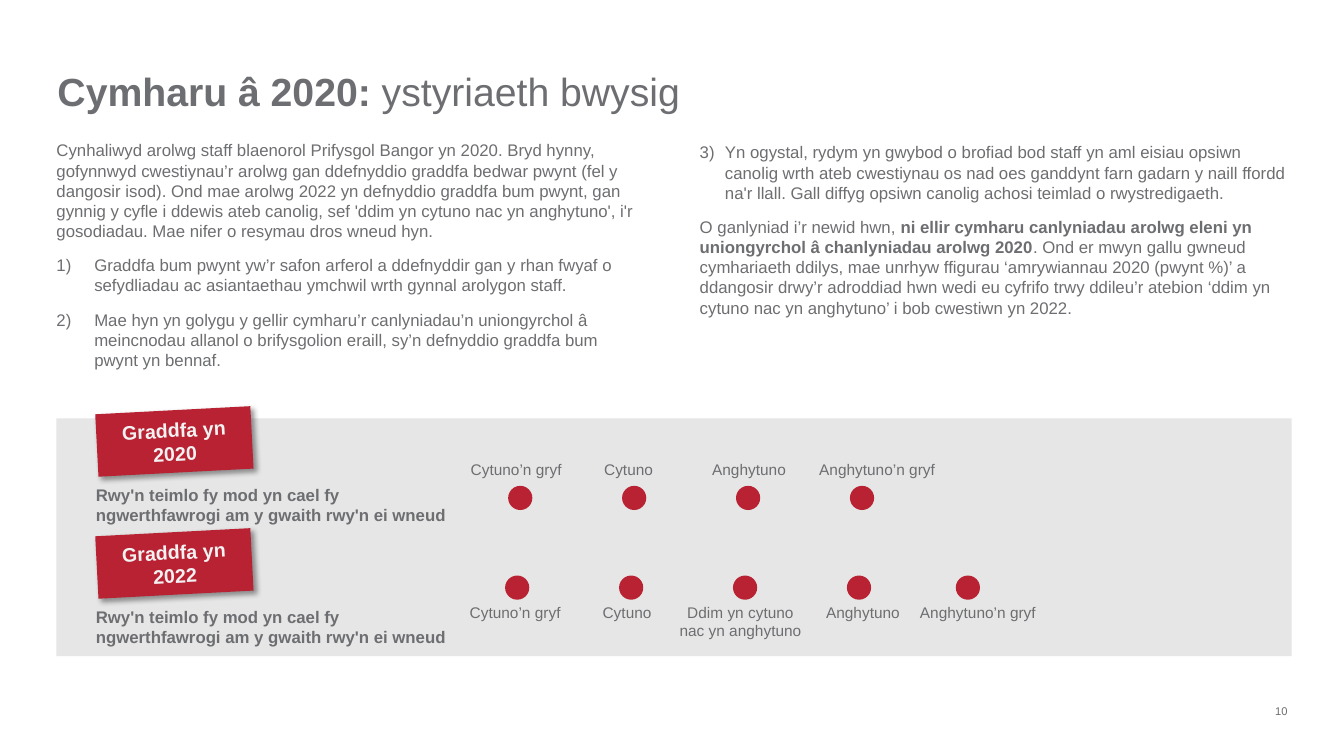
from lxml.etree import SubElement
from pptx import Presentation
from pptx.dml.color import RGBColor
from pptx.enum.shapes import MSO_SHAPE
from pptx.enum.text import MSO_ANCHOR, MSO_AUTO_SIZE, PP_ALIGN
from pptx.oxml.ns import qn
from pptx.util import Inches, Pt

CELL = 0.1  # grid cell in inches: 133.3 columns by 75 rows
GREY, RED, PANEL, PALE = "6D6E71", "B82233", "E6E6E6", "F2F2F2"


def grid(*cells):
    return [Inches(cell * CELL) for cell in cells]


def colour(target, value):
    target.rgb = RGBColor.from_string(value)


def child(parent, tag, **attributes):
    element = SubElement(parent, qn(tag))
    for name, value in attributes.items():
        element.set(name, str(value))
    return element


def write(frame, text, *, size=12, ink=GREY, bold=False, align=PP_ALIGN.LEFT,
          before=0, number=None, hang=0):
    """Add a paragraph; words between ** marks are bold."""
    paragraph = frame.paragraphs[0]
    if paragraph.runs:
        paragraph = frame.add_paragraph()
    properties = paragraph._p.get_or_add_pPr()
    indent = Inches(hang * CELL)
    properties.set("marL", str(indent))
    properties.set("indent", str(-indent))
    if number:
        child(properties, "a:buAutoNum", type="arabicParenR", startAt=number)
    else:
        child(properties, "a:buNone")
    paragraph.alignment = align
    paragraph.line_spacing = 1.0
    paragraph.space_before, paragraph.space_after = Pt(before), Pt(0)
    for index, part in enumerate(text.split("**")):
        if part:
            run = paragraph.add_run()
            run.text = part
            run.font.name, run.font.size = "Arial", Pt(size)
            run.font.bold = bold or index % 2 == 1
            colour(run.font.color, ink)


class SlideBuilder:
    def __init__(self, slide):
        self.slide = slide
        self.shapes = slide.shapes

    def prepare(self, frame, margin=0, anchor=MSO_ANCHOR.TOP):
        frame.word_wrap = True
        frame.auto_size = MSO_AUTO_SIZE.NONE
        frame.vertical_anchor = anchor
        frame.margin_left = frame.margin_right = Inches(margin)
        frame.margin_top = frame.margin_bottom = Inches(margin)
        return frame

    def placeholder(self, index, *cells):
        holder = self.slide.placeholders[index]
        holder.left, holder.top, holder.width, holder.height = grid(*cells)
        return self.prepare(holder.text_frame)

    def text(self, *cells):
        return self.prepare(self.shapes.add_textbox(*grid(*cells)).text_frame)

    def block(self, kind, fill, *cells):
        block = self.shapes.add_shape(kind, *grid(*cells))
        block.shadow.inherit = False
        block.fill.solid()
        colour(block.fill.fore_color, fill)
        block.line.fill.background()
        return block

    def badge(self, label, *cells):
        badge = self.block(MSO_SHAPE.RECTANGLE, RED, *cells)
        badge.rotation = 357
        effects = badge._element.spPr.find(qn("a:effectLst"))
        shadow = child(effects, "a:outerShdw", blurRad=Pt(4), dist=Pt(3),
                       dir=45 * 60000, algn="tl", rotWithShape=0)
        child(child(shadow, "a:srgbClr", val="000000"), "a:alpha", val=40000)
        frame = self.prepare(badge.text_frame, 0.08, MSO_ANCHOR.MIDDLE)
        write(frame, label, size=14, ink=PALE, bold=True, align=PP_ALIGN.CENTER)

    def scale(self, dot_row, label_row, label_height, points):
        """Each point is its dot's left, the answer, its centre and its width."""
        for dot, answer, centre, width in points:
            self.block(MSO_SHAPE.FLOWCHART_CONNECTOR, RED, dot, dot_row, 2.4, 2.4)
            label = self.text(centre - width / 2, label_row, width, label_height)
            write(label, answer, size=11, align=PP_ALIGN.CENTER)


def main():
    deck = Presentation()
    deck.slide_width, deck.slide_height = Inches(13.33), Inches(7.5)
    page = SlideBuilder(deck.slides.add_slide(deck.slide_layouts[3]))

    # Heading
    heading = page.placeholder(0, 5.7, 6.7, 111, 4.7)
    write(heading, "**Cymharu â 2020: **ystyriaeth bwysig", size=28)

    # Reasons, left column
    reasons = page.placeholder(1, 5.6, 13.9, 58.3, 22.8)
    write(reasons, "Cynhaliwyd arolwg staff blaenorol Prifysgol Bangor yn 2020. Bryd hynny, "
          "gofynnwyd cwestiynau’r arolwg gan ddefnyddio graddfa bedwar pwynt (fel y dangosir "
          "isod). Ond mae arolwg 2022 yn defnyddio graddfa bum pwynt, gan gynnig y cyfle i "
          "ddewis ateb canolig, sef 'ddim yn cytuno nac yn anghytuno', i'r gosodiadau. Mae "
          "nifer o resymau dros wneud hyn.")
    for reason in (
        "Graddfa bum pwynt yw’r safon arferol a ddefnyddir gan y rhan fwyaf o sefydliadau ac "
        "asiantaethau ymchwil wrth gynnal arolygon staff.",
        "Mae hyn yn golygu y gellir cymharu’r canlyniadau’n uniongyrchol â meincnodau allanol "
        "o brifysgolion eraill, sy’n defnyddio graddfa bum pwynt yn bennaf.",
    ):
        write(reasons, reason, before=10, number=1, hang=3.75)

    # Third reason and conclusion, right column
    conclusion = page.placeholder(2, 69.4, 14.1, 58.7, 17.4)
    write(conclusion, "Yn ogystal, rydym yn gwybod o brofiad bod staff yn aml eisiau opsiwn "
          "canolig wrth ateb cwestiynau os nad oes ganddynt farn gadarn y naill ffordd na'r "
          "llall. Gall diffyg opsiwn canolig achosi teimlad o rwystredigaeth.",
          number=3, hang=2.5)
    write(conclusion, "O ganlyniad i’r newid hwn, **ni ellir cymharu canlyniadau arolwg eleni "
          "yn uniongyrchol â chanlyniadau arolwg 2020**. Ond er mwyn gallu gwneud cymhariaeth "
          "ddilys, mae unrhyw ffigurau ‘amrywiannau 2020 (pwynt %)’ a ddangosir drwy’r "
          "adroddiad hwn wedi eu cyfrifo trwy ddileu’r atebion ‘ddim yn cytuno nac yn "
          "anghytuno’ i bob cwestiwn yn 2022.", before=10)

    # Panel with a badge and the statement for each year
    page.block(MSO_SHAPE.RECTANGLE, PANEL, 5.6, 41.5, 122.5, 23.6)
    for row, year in enumerate((2020, 2022)):
        drop = 12.1 * row
        page.badge(f"Graddfa yn {year}", 9.6, 40.7 + drop, 15.4, 6.2)
        write(page.text(9.5, 48.1 + drop, 35.8, 4),
              "Rwy'n teimlo fy mod yn cael fy ngwerthfawrogi am y gwaith rwy'n ei wneud",
              bold=True)

    # Answer scales: four points, then five
    page.scale(48.2, 45.6, 1.8, [
        (50.4, "Cytuno’n gryf", 51.2, 9.8),
        (61.7, "Cytuno", 62.35, 9),
        (73, "Anghytuno", 74.3, 9),
        (84.3, "Anghytuno’n gryf", 87, 12.6),
    ])
    page.scale(57.1, 59.8, 3.7, [
        (50.1, "Cytuno’n gryf", 51.1, 9.8),
        (61.4, "Cytuno", 62.2, 9),
        (72.7, "Ddim yn cytuno nac yn anghytuno", 73.45, 12.6),
        (84, "Anghytuno", 85.6, 9),
        (94.8, "Anghytuno’n gryf", 97, 12.6),
    ])

    # Page number
    write(page.text(123.8, 69.9, 3.9, 1.3), "10", size=8, align=PP_ALIGN.RIGHT)

    deck.save("out.pptx")


if __name__ == "__main__":
    main()
